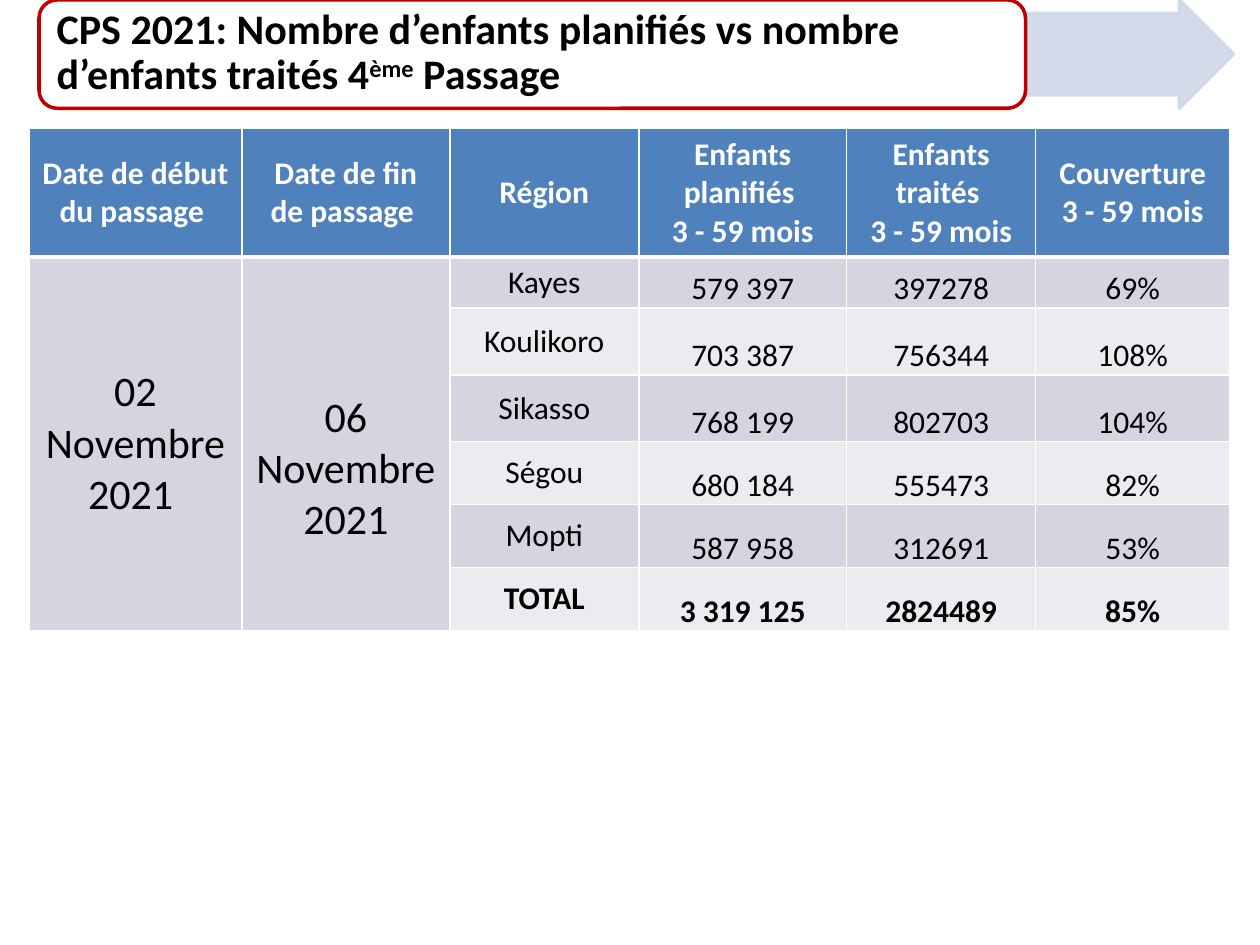
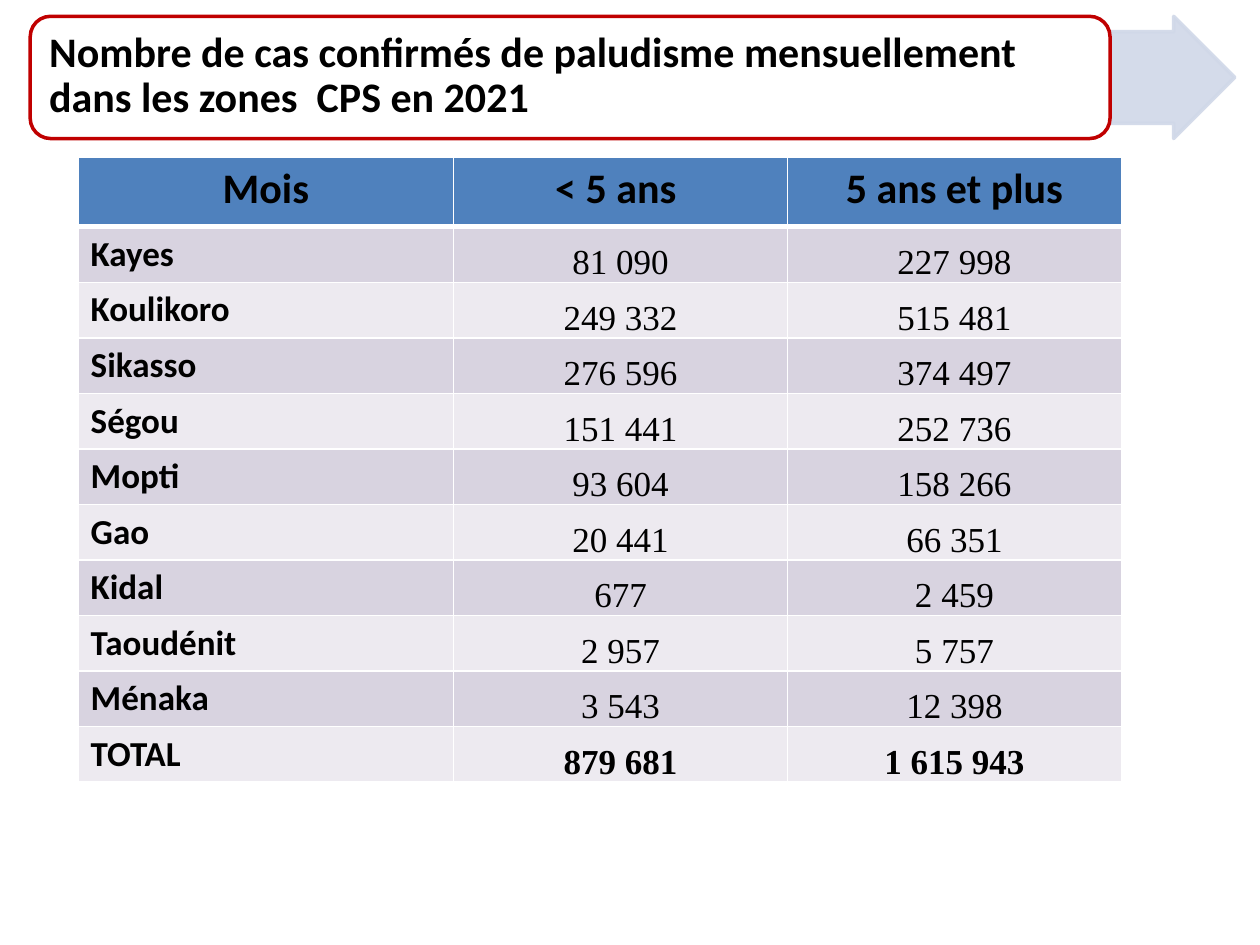
from dataclasses import dataclass
from typing import NamedTuple

from lxml import etree
from pptx import Presentation
from pptx.dml.color import RGBColor
from pptx.enum.shapes import MSO_SHAPE
from pptx.enum.text import MSO_ANCHOR, MSO_AUTO_SIZE, PP_ALIGN
from pptx.oxml.ns import qn
from pptx.util import Inches, Pt

LEFT, CENTER = PP_ALIGN.LEFT, PP_ALIGN.CENTER
TOP, MIDDLE, BOTTOM = MSO_ANCHOR.TOP, MSO_ANCHOR.MIDDLE, MSO_ANCHOR.BOTTOM
NO_AUTOFIT = MSO_AUTO_SIZE.NONE
ARROW, ROUNDED = MSO_SHAPE.RIGHT_ARROW, MSO_SHAPE.ROUNDED_RECTANGLE

COLORS = {
    "white": "FFFFFF",
    "black": "000000",
    "header": "4F81BD",
    "band_dark": "D8D3E0",
    "band_light": "EDEAF0",
    "arrow": "D0D8E8",
    "frame": "C00000",
}
BODY_FONT = "Calibri"
TITLE_ONLY = 5


class Box(NamedTuple):
    left: float
    top: float
    width: float
    height: float

    def lengths(self) -> list:
        return [Inches(value) for value in self]


class TitleSegment(NamedTuple):
    text: str
    superscript: bool = False


class CellStyle(NamedTuple):
    size: int
    bold: bool = False
    font: str = BODY_FONT
    color: str = "black"
    align: int = CENTER
    anchor: int = MIDDLE
    tight: bool = False


@dataclass
class Banner:
    frame: Box
    arrow: Box
    title: Box
    segments: list[TitleSegment]


@dataclass
class Grid:
    left: float
    top: float
    columns: list[float]
    row_heights: list[float]
    header: list[str]
    header_style: CellStyle
    first_column: int
    body: list[tuple]
    label_style: CellStyle
    number_style: CellStyle


CASES_BY_REGION = [
    ("Kayes", "81 090", "227 998"),
    ("Koulikoro", "249 332", "515 481"),
    ("Sikasso", "276 596", "374 497"),
    ("Ségou", "151 441", "252 736"),
    ("Mopti", "93 604", "158 266"),
    ("Gao", "20 441", "66 351"),
    ("Kidal", "677", "2 459"),
    ("Taoudénit", "2 957", "5 757"),
    ("Ménaka", "3 543", "12 398"),
    ("TOTAL", "879 681", "1 615 943"),
]
COVERAGE_BY_REGION = [
    ("Kayes", "579 397", "397278", "69%"),
    ("Koulikoro", "703 387", "756344", "108%"),
    ("Sikasso", "768 199", "802703", "104%"),
    ("Ségou", "680 184", "555473", "82%"),
    ("Mopti", "587 958", "312691", "53%"),
    ("TOTAL", "3 319 125", "2824489", "85%"),
]

COVERAGE_BANNER = Banner(
    Box(0.31, 0, 7.83, 0.86), Box(8.15, 0, 1.64, 0.86), Box(0.35, 0.04, 7.75, 0.77),
    [
        TitleSegment("CPS 2021: Nombre d’enfants planifiés vs nombre d’enfants traités 4"),
        TitleSegment("ème", superscript=True),
        TitleSegment(" Passage"),
    ],
)
COVERAGE = Grid(
    0.23, 1.02, [1.69, 1.65, 1.5, 1.65, 1.5, 1.54],
    [1.02, 0.4, 0.53, 0.53, 0.5, 0.5, 0.5],
    [
        "Date de début du passage ", "Date de fin de passage ", "Région",
        "Enfants planifiés \n3 - 59 mois", "Enfants traités \n3 - 59 mois",
        "Couverture\n3 - 59 mois",
    ],
    CellStyle(18, bold=True, color="white"),
    2, COVERAGE_BY_REGION,
    CellStyle(18), CellStyle(18, anchor=BOTTOM, tight=True),
)
CASES_BANNER = Banner(
    Box(0.24, 0.13, 8.57, 0.97), Box(8.81, 0.13, 0.99, 0.97), Box(0.29, 0.17, 8.48, 0.87),
    [TitleSegment("Nombre de cas confirmés de paludisme mensuellement dans les zones  CPS en 2021")],
)
CASES = Grid(
    0.62, 1.25, [2.98, 2.65, 2.65], [0.55] + [0.44] * len(CASES_BY_REGION),
    ["Mois", "< 5 ans ", "5 ans et plus"],
    CellStyle(24, bold=True, anchor=TOP),
    0, CASES_BY_REGION,
    CellStyle(20, bold=True, align=LEFT, anchor=TOP),
    CellStyle(20, font="Times New Roman", anchor=BOTTOM, tight=True),
)


def rgb(name: str) -> RGBColor:
    return RGBColor.from_string(COLORS[name])


def add_text(paragraph, text: str, *, size: int, bold: bool = False, font: str = BODY_FONT,
             color: str = "black", align: int = LEFT, superscript: bool = False) -> None:
    paragraph.alignment = align
    for index, line in enumerate(text.split("\n")):
        if index:
            paragraph.add_line_break()
        run = paragraph.add_run()
        run.text = line
        run.font.size, run.font.bold, run.font.name = Pt(size), bold, font
        run.font.color.rgb = rgb(color)
        if superscript:
            run._r.get_or_add_rPr().set("baseline", "30000")


def add_panel(slide, preset: int, box: Box, fill: str, line: str):
    panel = slide.shapes.add_shape(preset, *box.lengths())
    panel.shadow.inherit = False
    panel.fill.solid()
    panel.fill.fore_color.rgb = rgb(fill)
    panel.line.color.rgb = rgb(line)
    panel.line.width = Pt(2)
    return panel


def add_banner(slide, banner: Banner) -> None:
    arrow = add_panel(slide, ARROW, banner.arrow, "arrow", "arrow")
    arrow.adjustments[0], arrow.adjustments[1] = 0.75, 0.5
    for color in arrow.element.spPr.iter(qn("a:srgbClr")):
        etree.SubElement(color, qn("a:alpha"), val="90000")
    add_panel(slide, ROUNDED, banner.frame, "white", "frame")

    title = slide.shapes.title
    title.left, title.top, title.width, title.height = banner.title.lengths()
    title.element.getparent().append(title.element)
    frame = title.text_frame
    frame.word_wrap, frame.auto_size, frame.vertical_anchor = True, NO_AUTOFIT, MIDDLE
    paragraph = frame.paragraphs[0]
    paragraph.line_spacing = 0.9
    for segment in banner.segments:
        add_text(paragraph, segment.text, size=24, bold=True, superscript=segment.superscript)


def set_borders(cell, top: int, bottom: int) -> None:
    properties = cell._tc.get_or_add_tcPr()
    for side, width in (("L", 1), ("R", 1), ("T", top), ("B", bottom)):
        border = etree.SubElement(properties, qn(f"a:ln{side}"), w=str(Pt(width)))
        fill = etree.SubElement(border, qn("a:solidFill"))
        etree.SubElement(fill, qn("a:srgbClr"), val=COLORS["white"])


def fill_cell(cell, text: str, style: CellStyle) -> None:
    cell.vertical_anchor = style.anchor
    if style.tight:
        cell.margin_left = cell.margin_right = cell.margin_top = Inches(0.01)
        cell.margin_bottom = 0
    add_text(cell.text_frame.paragraphs[0], text, size=style.size, bold=style.bold,
             font=style.font, color=style.color, align=style.align)


def add_grid(slide, grid: Grid):
    area = Box(grid.left, grid.top, sum(grid.columns), sum(grid.row_heights))
    table = slide.shapes.add_table(
        len(grid.row_heights), len(grid.columns), *area.lengths()).table
    for column, width in zip(table.columns, grid.columns):
        column.width = Inches(width)
    for index, (row, height) in enumerate(zip(table.rows, grid.row_heights)):
        row.height = Inches(height)
        band = "header" if index == 0 else "band_dark" if index % 2 else "band_light"
        for cell in row.cells:
            set_borders(cell, top=3 if index == 1 else 1, bottom=3 if index == 0 else 1)
            cell.fill.solid()
            cell.fill.fore_color.rgb = rgb(band)

    for column, heading in enumerate(grid.header):
        fill_cell(table.cell(0, column), heading, grid.header_style)
    for row, (label, *numbers) in enumerate(grid.body, start=1):
        is_total = label == "TOTAL"
        label_style = grid.label_style._replace(bold=is_total or grid.label_style.bold)
        fill_cell(table.cell(row, grid.first_column), label, label_style)
        for column, number in enumerate(numbers, start=grid.first_column + 1):
            fill_cell(table.cell(row, column), number, grid.number_style._replace(bold=is_total))
    return table


def add_passage_dates(table) -> None:
    last_row = len(table.rows) - 1
    for column, date in enumerate(("02 Novembre 2021 ", "06 Novembre 2021")):
        date_cell = table.cell(1, column)
        date_cell.merge(table.cell(last_row, column))
        fill_cell(date_cell, date, CellStyle(24))
    table.cell(1, 1).margin_top = Inches(0.45)


def main() -> None:
    deck = Presentation()
    deck.slide_width, deck.slide_height = Inches(10), Inches(7.5)
    layout = deck.slide_layouts[TITLE_ONLY]

    coverage_slide = deck.slides.add_slide(layout)
    add_passage_dates(add_grid(coverage_slide, COVERAGE))
    add_banner(coverage_slide, COVERAGE_BANNER)

    cases_slide = deck.slides.add_slide(layout)
    add_grid(cases_slide, CASES)
    add_banner(cases_slide, CASES_BANNER)

    deck.save("out.pptx")


if __name__ == "__main__":
    main()
